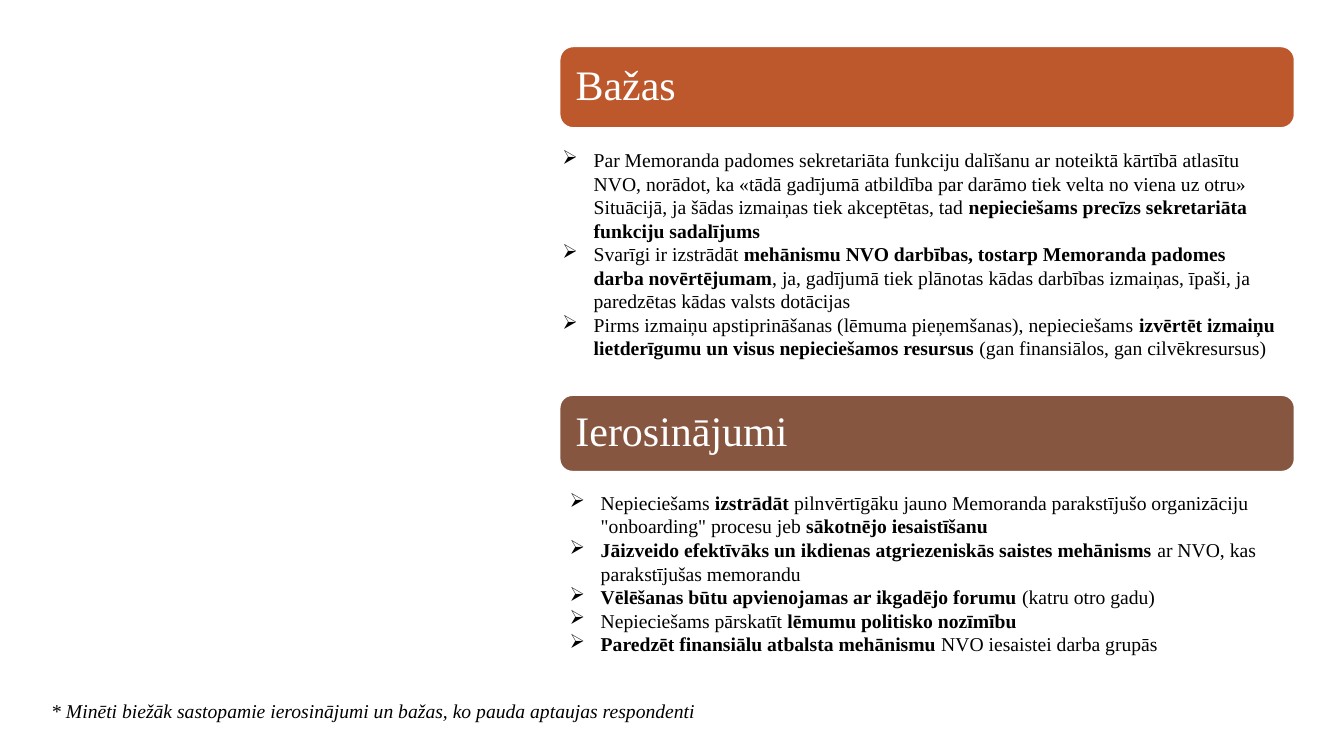
import pptx
import pptx.dml.color
import pptx.enum.shapes
import pptx.enum.text
import pptx.oxml
import pptx.oxml.ns
import pptx.util

PX = 9144  # EMU per px, 100 px to the inch
FONT = "Times New Roman"
LEFT, WIDTH = 555, 729

# Each bullet is a list of (text, bold) runs.
CONCERNS = [
    [("Par Memoranda padomes sekretariāta funkciju dalīšanu ar noteiktā kārtībā "
      "atlasītu NVO, norādot, ka «tādā gadījumā atbildība par darāmo tiek velta no "
      "viena uz otru» Situācijā, ja šādas izmaiņas tiek akceptētas, tad ", False),
     ("nepieciešams precīzs sekretariāta funkciju sadalījums", True)],
    [("Svarīgi ir izstrādāt ", False),
     ("mehānismu NVO darbības, tostarp Memoranda padomes darba novērtējumam", True),
     (", ja, gadījumā tiek plānotas kādas darbības izmaiņas, īpaši, ja paredzētas "
      "kādas valsts dotācijas", False)],
    [("Pirms izmaiņu apstiprināšanas (lēmuma pieņemšanas), nepieciešams ", False),
     ("izvērtēt izmaiņu lietderīgumu un visus nepieciešamos resursus ", True),
     ("(gan finansiālos, gan cilvēkresursus)", False)],
]
SUGGESTIONS = [
    [("Nepieciešams", False), (" izstrādāt ", True),
     ("pilnvērtīgāku jauno Memoranda parakstījušo organizāciju \"onboarding\" "
      "procesu jeb ", False),
     ("sākotnējo iesaistīšanu", True)],
    [("Jāizveido efektīvāks un ikdienas atgriezeniskās saistes mehānisms ", True),
     ("ar NVO, kas parakstījušas memorandu", False)],
    [("Vēlēšanas būtu apvienojamas ar ikgadējo forumu ", True),
     ("(katru otro gadu)", False)],
    [("Nepieciešams pārskatīt ", False), ("lēmumu politisko nozīmību", True)],
    [("Paredzēt finansiālu atbalsta mehānismu ", True),
     ("NVO iesaistei darba grupās", False)],
]


def px(n):
    return pptx.util.Emu(n * PX)


def rgb(color):
    return pptx.dml.color.RGBColor.from_string(color)


def add_run(p, text, size=14, color="000000", bold=False, italic=False):
    r = p.add_run()
    r.text = text
    r.font.name = FONT
    r.font.size = pptx.util.Pt(size)
    r.font.color.rgb = rgb(color)
    r.font.bold = bold
    r.font.italic = italic


def add_bullet(p, indent=31):
    pPr = p._p.get_or_add_pPr()
    pPr.set("marL", str(px(indent)))
    pPr.set("indent", str(-px(indent)))
    bullet = pptx.oxml.parse_xml(
        f'<a:buChar {pptx.oxml.ns.nsdecls("a")} char="➢"/>')
    pPr.append(bullet)


def draw_heading(s, box, title, color):
    sp = s.shapes.add_shape(
        pptx.enum.shapes.MSO_SHAPE.ROUNDED_RECTANGLE, *map(px, box))
    sp.shadow.inherit = False
    sp.fill.solid()
    sp.fill.fore_color.rgb = rgb(color)
    sp.line.color.rgb = rgb("FFFFFF")
    sp.line.width = pptx.util.Pt(1.25)
    tf = sp.text_frame
    tf.margin_left = tf.margin_right = px(12)
    tf.margin_top = tf.margin_bottom = px(12)
    tf.vertical_anchor = pptx.enum.text.MSO_ANCHOR.MIDDLE
    p = tf.paragraphs[0]
    p.alignment = pptx.enum.text.PP_ALIGN.LEFT
    p.line_spacing = 0.9
    add_run(p, title, 30, "FFFFFF")


def draw_bullets(s, box, bullets):
    tf = s.shapes.add_textbox(*map(px, box)).text_frame
    tf.word_wrap = True
    for i, runs in enumerate(bullets):
        p = tf.add_paragraph() if i else tf.paragraphs[0]
        add_bullet(p)
        for text, bold in runs:
            add_run(p, text, bold=bold)


def draw_footnote(s, box, text):
    tf = s.shapes.add_textbox(*map(px, box)).text_frame
    tf.word_wrap = False
    add_run(tf.paragraphs[0], text, italic=True)


def main():
    prs = pptx.Presentation()
    prs.slide_width, prs.slide_height = px(1333), px(750)
    s = prs.slides.add_slide(prs.slide_layouts[6])
    draw_heading(s, (LEFT, 46, WIDTH, 81), "Bažas", "BD582C")
    draw_bullets(s, (LEFT - 7, 142, WIDTH, 246), CONCERNS)
    draw_heading(s, (LEFT, 392, WIDTH, 76), "Ierosinājumi", "865640")
    draw_bullets(s, (LEFT, 482, WIDTH, 222), SUGGESTIONS)
    draw_footnote(s, (41, 688, 665, 34),
                  "* Minēti biežāk sastopamie ierosinājumi un bažas, "
                  "ko pauda aptaujas respondenti")
    prs.save("out.pptx")


if __name__ == "__main__":
    main()
